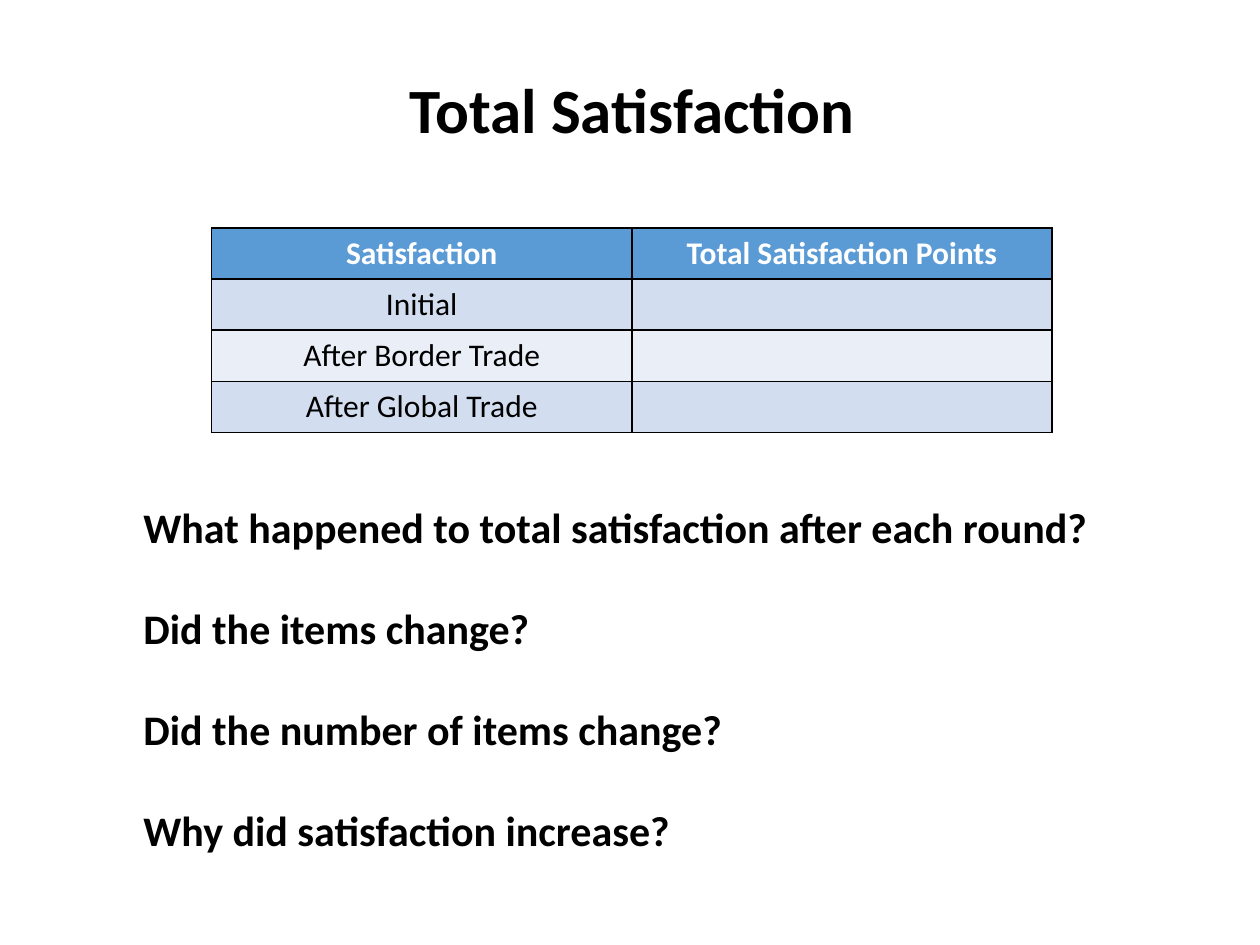
"""Build the Total Satisfaction slide with its table and discussion questions."""
from typing import NamedTuple

from lxml import etree
from pptx import Presentation
from pptx.dml.color import RGBColor
from pptx.enum.text import MSO_ANCHOR, MSO_AUTO_SIZE, PP_ALIGN
from pptx.oxml.ns import qn
from pptx.util import Inches, Pt

LEFT, CENTER = PP_ALIGN.LEFT, PP_ALIGN.CENTER
TOP = MSO_ANCHOR.TOP
NO_AUTOFIT = MSO_AUTO_SIZE.NONE
BLACK = RGBColor(0x00, 0x00, 0x00)
WHITE = RGBColor(0xFF, 0xFF, 0xFF)
HEADER_BLUE = RGBColor(0x5B, 0x9B, 0xD5)
BAND_DARK = RGBColor(0xD2, 0xDE, 0xEF)
BAND_LIGHT = RGBColor(0xEA, 0xEF, 0xF7)
FONT = "Calibri"
TITLE_ONLY = 5


class TableRow(NamedTuple):
    label: str
    points: str
    fill: RGBColor
    color: RGBColor = BLACK
    bold: bool = False


ROWS = [
    TableRow("Satisfaction", "Total Satisfaction Points", HEADER_BLUE, WHITE, True),
    TableRow("Initial", "", BAND_DARK),
    TableRow("After Border Trade", "", BAND_LIGHT),
    TableRow("After Global Trade", "", BAND_DARK),
]
QUESTIONS = [
    "What happened to total satisfaction after each round?",
    "Did the items change?",
    "Did the number of items change?",
    "Why did satisfaction increase?",
]


def write(frame, lines: list[str], *, size: float, color: RGBColor = BLACK,
          bold: bool = True, align=CENTER, gap: float = 0) -> None:
    for index, line in enumerate(lines):
        para = frame.paragraphs[0] if index == 0 else frame.add_paragraph()
        para.alignment = align
        para.space_before = Pt(gap if index else 0)
        para.font.size = Pt(size)
        if line:
            span = para.add_run()
            span.text = line
            span.font.name = FONT
            span.font.size = Pt(size)
            span.font.bold = bold
            span.font.color.rgb = color


def draw_borders(cell, color: RGBColor, width: float) -> None:
    properties = cell._tc.get_or_add_tcPr()
    for side in ("lnL", "lnR", "lnT", "lnB"):
        line = etree.SubElement(properties, qn(f"a:{side}"), w=str(Pt(width)))
        fill = etree.SubElement(line, qn("a:solidFill"))
        etree.SubElement(fill, qn("a:srgbClr"), val=str(color))


def add_title(page, text: str) -> None:
    title = page.shapes.title
    title.left, title.top = Inches(1.68), Inches(0.51)
    title.width, title.height = Inches(6.67), Inches(0.71)
    title.text_frame.auto_size = NO_AUTOFIT
    title.text_frame.vertical_anchor = TOP
    write(title.text_frame, [text], size=36)


def add_satisfaction_table(page, rows: list[TableRow]) -> None:
    table = page.shapes.add_table(
        len(rows), 2, Inches(1.68), Inches(1.81), Inches(6.67), Inches(1.62)).table
    for row, entry in zip(table.rows, rows):
        for cell, text in zip(row.cells, (entry.label, entry.points)):
            draw_borders(cell, BLACK, 1)
            cell.fill.solid()
            cell.fill.fore_color.rgb = entry.fill
            write(cell.text_frame, [text], size=18, color=entry.color, bold=entry.bold)


def add_questions(page, questions: list[str]) -> None:
    box = page.shapes.add_textbox(
        Inches(1.04), Inches(3.93), Inches(8.96), Inches(3.33))
    box.text_frame.word_wrap = True
    write(box.text_frame, questions, size=24, align=LEFT, gap=29)


def main() -> None:
    deck = Presentation()
    deck.slide_width, deck.slide_height = Inches(10), Inches(7.5)
    page = deck.slides.add_slide(deck.slide_layouts[TITLE_ONLY])
    add_title(page, "Total Satisfaction")
    add_satisfaction_table(page, ROWS)
    add_questions(page, QUESTIONS)
    deck.save("out.pptx")


if __name__ == "__main__":
    main()
